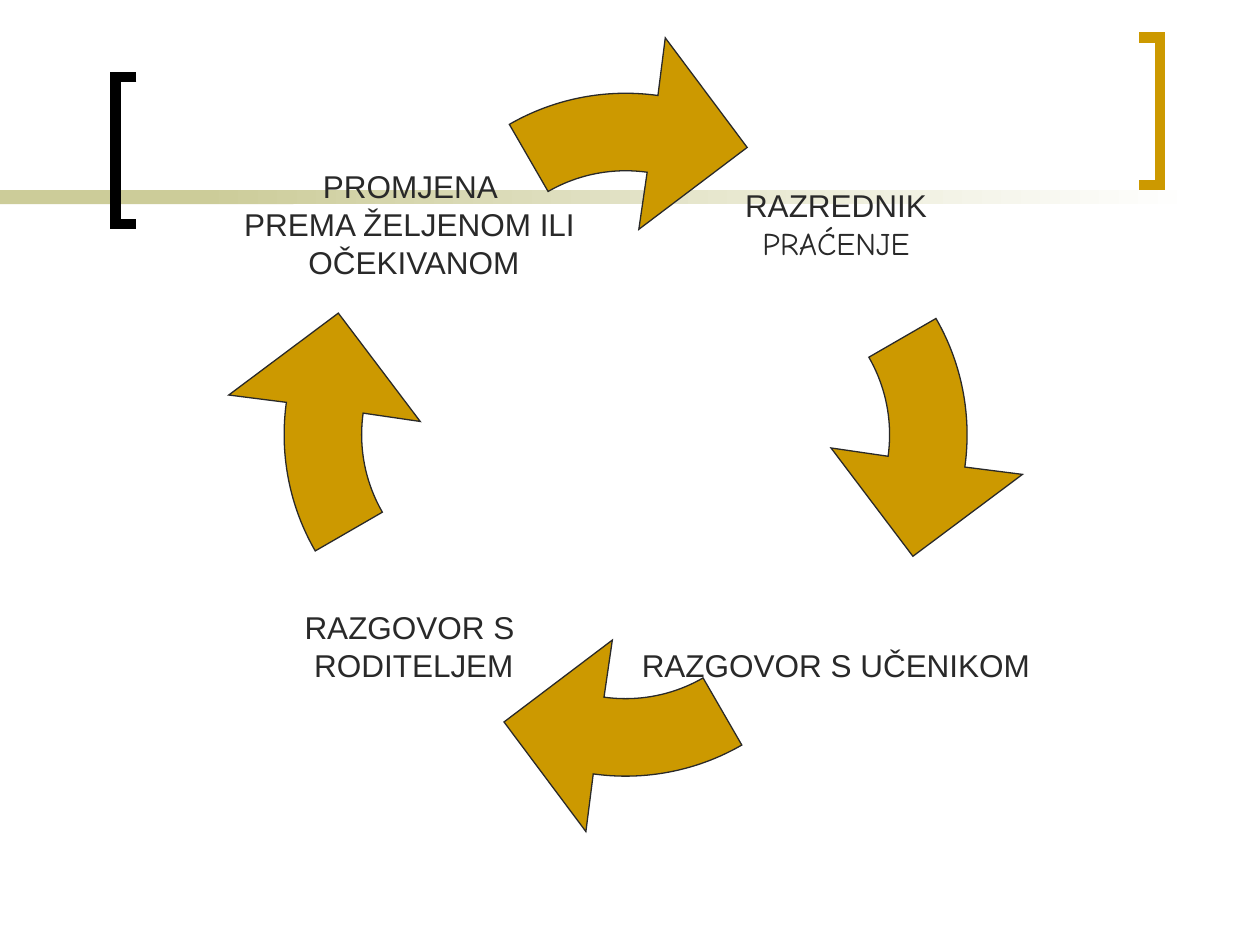
import math
from dataclasses import dataclass

from lxml import etree
from pptx import Presentation
from pptx import util as u
from pptx.dml.color import RGBColor
from pptx.enum import shapes, text
from pptx.oxml.ns import qn


@dataclass(frozen=True)
class Theme:
    gold: str = "CC9900"
    sand: str = "CCCC99"
    white: str = "FFFFFF"
    black: str = "000000"
    ink: str = "292929"
    font: str = "Arial"
    hand_font: str = "Comic Neue"
    size: int = 18
    outline: float = 0.75
    bracket: float = 6


class Canvas:
    """Places elements on a grid of 100 columns and 75 rows."""

    def __init__(self, deck, theme):
        self.theme = theme
        self.page = deck.slides.add_slide(deck.slide_layouts[6])
        self.column = deck.slide_width / 100
        self.row = deck.slide_height / 75

    def at(self, x, y):
        return round(x * self.column), round(y * self.row)

    def rectangle(self, x, y, width, height):
        box = self.page.shapes.add_shape(
            shapes.MSO_SHAPE.RECTANGLE, *self.at(x, y), *self.at(width, height))
        box.shadow.inherit = False
        box.line.fill.background()
        return box

    def band(self, x, y, width, height, start, end=None):
        box = self.rectangle(x, y, width, height)
        if end is None:
            box.fill.solid()
            box.fill.fore_color.rgb = RGBColor.from_string(start)
            return
        box.fill.gradient()
        box.fill.gradient_angle = 0
        for stop, color, position in zip(box.fill.gradient_stops, (start, end), (0, 1)):
            stop.color.rgb = RGBColor.from_string(color)
            stop.position = position

    def outline(self, points, line, weight, close):
        first, *rest = [self.at(x, y) for x, y in points]
        builder = self.page.shapes.build_freeform(*first)
        builder.add_line_segments(rest, close=close)
        shape = builder.convert_to_shape()
        shape.shadow.inherit = False
        shape.fill.background()
        shape.line.color.rgb = RGBColor.from_string(line)
        shape.line.width = u.Pt(weight)
        edge = shape._element.spPr.find(qn("a:ln"))
        etree.SubElement(edge, qn("a:miter"), lim="800000")
        return shape

    def bracket(self, tip, spine, top, height, color):
        bottom = top + height
        self.outline([(tip, top), (spine, top), (spine, bottom), (tip, bottom)],
                     color, self.theme.bracket, close=False)

    def arrow(self, x, y, side, steps, rotation):
        """A curved outline, its steps measured from the corner of a square frame."""
        frame = [(x, y), (x + side, y), (x + side, y + side), (x, y + side)]
        shape = self.outline(frame, self.theme.ink, self.theme.outline, close=True)
        shape.fill.solid()
        shape.fill.fore_color.rgb = RGBColor.from_string(self.theme.gold)
        shape.rotation = rotation
        route = next(shape._element.iter(qn("a:path")))
        for child in list(route):
            route.remove(child)
        for kind, points in steps:
            step = etree.SubElement(route, qn(f"a:{kind}"))
            for point in points:
                across, down = self.at(*point)
                etree.SubElement(step, qn("a:pt"), x=str(across), y=str(down))
        etree.SubElement(route, qn("a:close"))

    def label(self, x, y, side, lines, top_inset=0):
        box = self.rectangle(x, y, side, side)
        box.fill.background()
        frame = box.text_frame
        frame.text = "\n".join(content for content, _ in lines)
        frame.word_wrap = False
        frame.vertical_anchor = text.MSO_ANCHOR.MIDDLE
        frame.margin_left = frame.margin_right = frame.margin_bottom = 0
        frame.margin_top = round(top_inset * self.row)
        for para, (_, font) in zip(frame.paragraphs, lines):
            para.alignment = text.PP_ALIGN.CENTER
            for span in para.runs:
                span.font.name = font
                span.font.size = u.Pt(self.theme.size)
                span.font.color.rgb = RGBColor.from_string(self.theme.ink)


def on_circle(center, radius, degrees):
    """Point on a circle, with the angle clockwise from the top."""
    angle = math.radians(degrees)
    return center + radius * math.sin(angle), center - radius * math.cos(angle)


def curve(center, radius, start, end):
    """One Bézier step along a circle."""
    reach = 4 / 3 * math.tan(math.radians(end - start) / 4)
    stretch, lean = math.hypot(1, reach), math.degrees(math.atan(reach))
    return "cubicBezTo", [on_circle(center, radius * stretch, start + lean),
                          on_circle(center, radius * stretch, end - lean),
                          on_circle(center, radius, end)]


def main():
    deck = Presentation()
    deck.slide_width, deck.slide_height = u.Inches(10), u.Inches(7.5)
    theme = Theme()
    canvas = Canvas(deck, theme)

    # Background band and brackets
    canvas.band(0, 15.1, 23.3, 1.1, theme.sand)
    canvas.band(15.8, 15.1, 79.2, 1.1, theme.sand, theme.white)
    canvas.bracket(10.83, 9.17, 6.1, 11.7, theme.black)
    canvas.bracket(90.4, 92.05, 3, 11.7, theme.gold)

    # Cycle of four arrows, each a quarter turn further round the wheel
    side, wheel, offset = 36.9, (49.65, 34.5), 8.65
    outer, inner, tail, neck = side / 2, side / 3, -30, 8
    middle = side / 2
    steps = [("moveTo", [on_circle(middle, inner, neck)]),
             curve(middle, inner, neck, 0),
             curve(middle, inner, 0, tail),
             ("lnTo", [on_circle(middle, outer, tail)]),
             curve(middle, outer, tail, 0),
             curve(middle, outer, 0, neck)]
    head = [(21.6, -4.4), (28.1, 4.3), (19.5, 10.8), on_circle(middle, inner, neck)]
    steps += [("lnTo", [point]) for point in head]
    for turn in range(4):
        angle = math.radians(90 * turn)
        canvas.arrow(wheel[0] + offset * math.sin(angle) - middle,
                     wheel[1] - offset * math.cos(angle) - middle,
                     side, steps, 90 * turn)

    # Labels between the arrows
    left, right, upper, lower, square = 25.9, 59.4, 10.8, 44.3, 13.9
    canvas.label(right, upper, square,
                 [("RAZREDNIK", theme.font), ("PRAĆENJE", theme.hand_font)])
    canvas.label(right, lower, square, [("RAZGOVOR S UČENIKOM", theme.font)], top_inset=3)
    canvas.label(left, lower, square,
                 [("RAZGOVOR S ", theme.font), ("RODITELJEM", theme.font)])
    canvas.label(left, upper, square,
                 [("PROMJENA ", theme.font), ("PREMA ŽELJENOM ILI ", theme.font),
                  ("OČEKIVANOM", theme.font)])

    deck.save("out.pptx")


if __name__ == "__main__":
    main()
